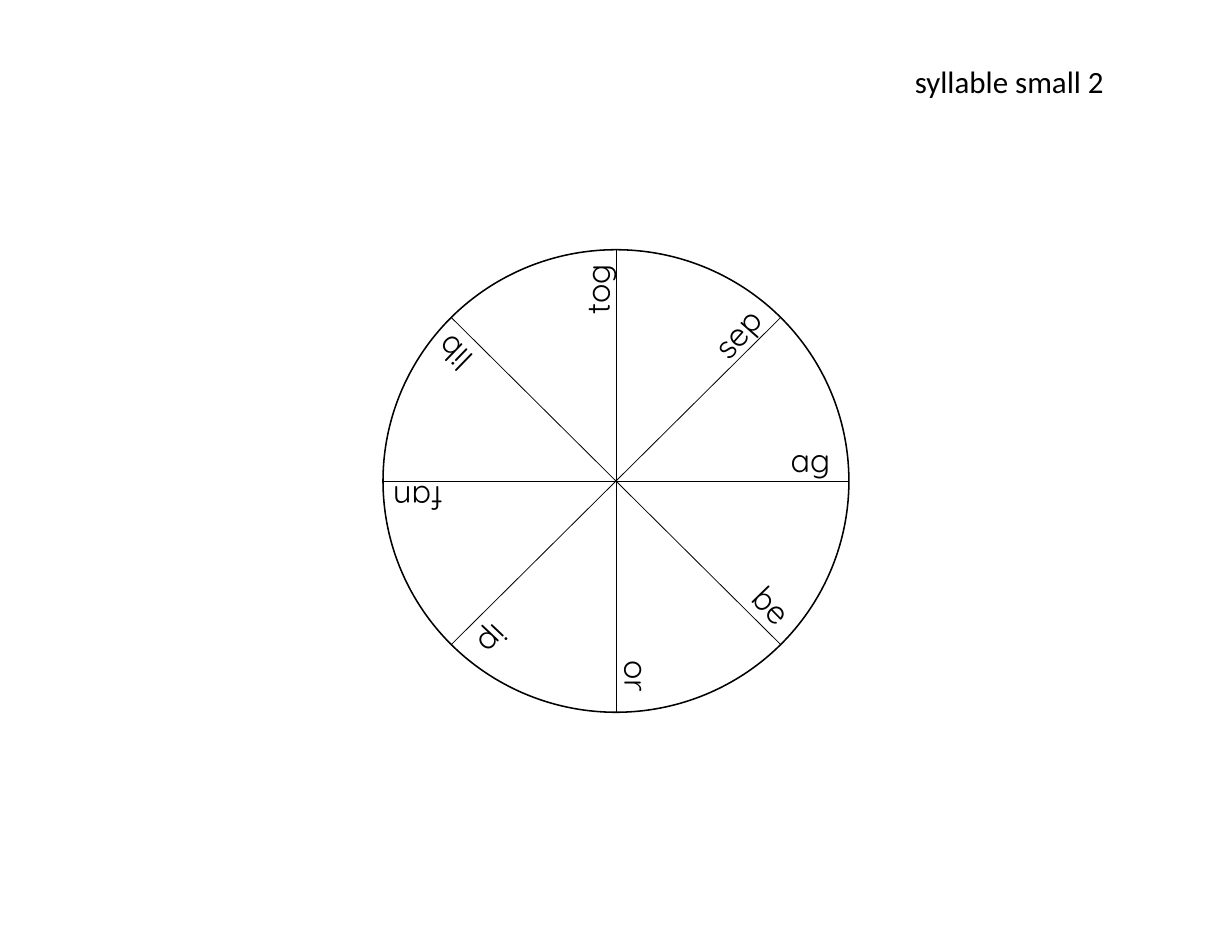
from math import cos, radians, sin

from lxml import etree
from pptx import Presentation
from pptx.dml.color import RGBColor
from pptx.enum.shapes import MSO_CONNECTOR, MSO_SHAPE
from pptx.enum.text import MSO_AUTO_SIZE
from pptx.oxml.ns import qn
from pptx.util import Inches, Pt

OVAL = MSO_SHAPE.OVAL
LINE = MSO_CONNECTOR.STRAIGHT
GROW = MSO_AUTO_SIZE.SHAPE_TO_FIT_TEXT

TITLE = "syllable small 2"
# syllable, turn in degrees, box width, start along the spoke, lift off the spoke
WORDS = [
    ("ag", 0, 1.11, 1.46, 0.19),
    ("be", 45.7, 1.09, 1.5, 0.22),
    ("or", 90, 0.95, 1.5, 0.19),
    ("ip", 133.5, 0.94, 1.57, 0.19),
    ("fan", 180, 1.18, 1.45, 0.16),
    ("lib", 224, 1.27, 1.58, 0.19),
    ("tog", 270, 1.24, 1.39, 0.17),
    ("sep", 311.3, 1.3, 1.37, 0.06),
]
THEME = {
    "ink": RGBColor(0, 0, 0),
    "word": {"font": "Quicksand", "size": 20.9},
    "title": {"font": "Calibri", "size": 19.9},
    "rim": 1,
    "spoke": 0.5,
}
WIDE, HIGH = 11, 8.5
MID_X, MID_Y = WIDE / 2, 4.295
RAD_X, RAD_Y = 2.08, 2.065
ROW = 0.45


def put_text(shapes, text, left, top, width, height=ROW, turn=0, *, font, size):
    box = shapes.add_textbox(*map(Inches, (left, top, width, height)))
    box.rotation = turn
    frame = box.text_frame
    frame.word_wrap = True
    frame.auto_size = GROW
    run = frame.paragraphs[0].add_run()
    run.text = text
    run.font.name = font
    run.font.size = Pt(size)
    run.font.color.rgb = THEME["ink"]


def stroke(shape, width):
    shape.line.color.rgb = THEME["ink"]
    shape.line.width = Pt(width)


def draw_wheel(shapes):
    rim = shapes.add_shape(OVAL, *map(Inches, (
        MID_X - RAD_X, MID_Y - RAD_Y, 2 * RAD_X, 2 * RAD_Y)))
    rim.fill.background()
    rim.shadow.inherit = False
    stroke(rim, THEME["rim"])

    for turn in range(0, 180, 45):
        dx, dy = RAD_X * cos(radians(turn)), RAD_Y * sin(radians(turn))
        spoke = shapes.add_connector(LINE, *map(Inches, (
            MID_X - dx, MID_Y - dy, MID_X + dx, MID_Y + dy)))
        stroke(spoke, THEME["spoke"])
        etree.SubElement(spoke._element.spPr, qn("a:effectLst"))


def place_words(shapes):
    """Set each syllable outward along its own turn, just above the spoke."""
    for word, turn, width, start, lift in WORDS:
        c, s = cos(radians(turn)), sin(radians(turn))
        out = start + width / 2
        x = MID_X + out * c + lift * s
        y = MID_Y + out * s - lift * c
        put_text(shapes, word, x - width / 2, y - ROW / 2, width,
                 turn=turn, **THEME["word"])


def main():
    deck = Presentation()
    deck.slide_width, deck.slide_height = Inches(WIDE), Inches(HIGH)
    slide = deck.slides.add_slide(deck.slide_layouts[6])
    wheel = slide.shapes.add_group_shape().shapes
    draw_wheel(wheel)
    place_words(wheel)
    put_text(slide.shapes, TITLE, 8.07, 0.51, 2.52, 0.44, **THEME["title"])
    deck.save("out.pptx")


if __name__ == "__main__":
    main()
